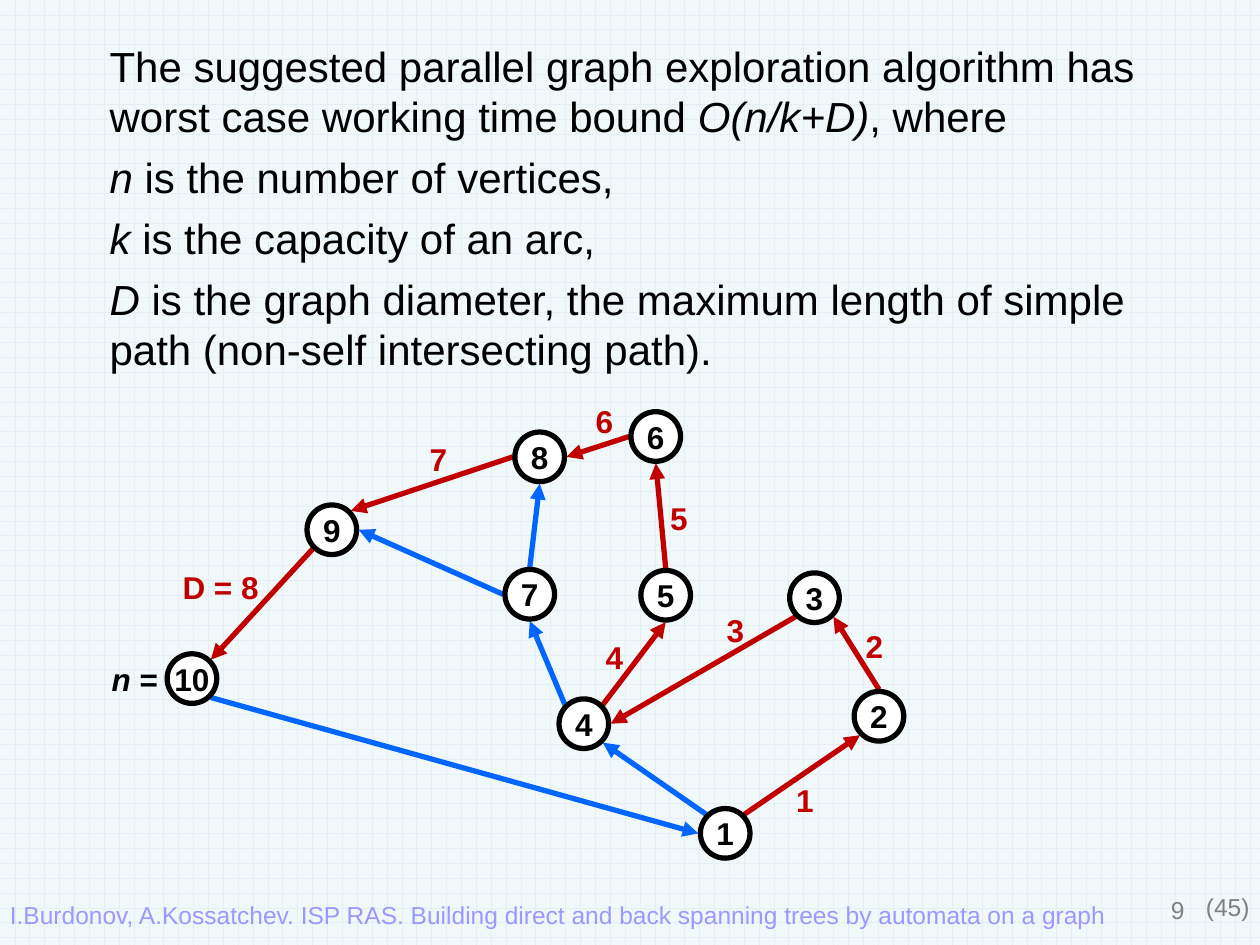
"""Build a slide on the working time bound of parallel graph exploration."""
import math

from lxml import etree
from pptx import Presentation
from pptx import util as u
from pptx.dml.color import RGBColor
from pptx.enum import dml, shapes, text
from pptx.oxml.ns import qn

COLORS = {
    "grid": "E7EDF5", "paper": "F1F8F9", "black": "000000", "white": "FFFFFF",
    "red": "C00000", "blue": "0066FF", "gray": "808080", "lilac": "9999FF",
}
NODES = {
    1: (14.62, 16.8), 2: (17.72, 14.44), 3: (16.42, 12.05), 4: (11.77, 14.59),
    5: (13.42, 12), 6: (13.22, 8.8), 7: (10.68, 11.98), 8: (10.88, 9.21),
    9: (6.69, 10.68), 10: (3.87, 13.68),
}
ANGLES = {"E": 0, "SE": 45, "S": 90, "SW": 135, "W": 180, "NW": 225, "N": 270, "NE": 315}
LONGEST_PATH = [
    (1, "NE", 2, "SW"), (2, "N", 3, "SE"), (3, "SW", 4, "E"), (4, "NE", 5, "S"),
    (5, "N", 6, "S"), (6, "W", 8, "E"), (8, "W", 9, "NE"), (9, "SW", 10, "NE"),
]
OTHER_ARCS = [
    (1, "NW", 4, "SE"), (4, "NW", 7, "S"), (7, "W", 9, "E"),
    (7, "N", 8, "S"), (10, "SE", 1, "W"),
]
STEP_LABELS = [
    ("1", 15.8, 15.62), ("2", 17.2, 12.52), ("3", 14.4, 12.19), ("4", 11.96, 12.73),
    ("5", 13.26, 9.93), ("6", 11.76, 7.98), ("7", 8.41, 8.74),
]
BODY = [
    [("The suggested parallel graph exploration algorithm has worst case "
      "working time bound ", False), ("O(n/k+D)", True), (", where", False)],
    [("n", True), (" is the number of vertices,", False)],
    [("k ", True), ("is the capacity of an arc,", False)],
    [("D", True), (" is the graph diameter, the maximum length of simple path "
                   "(non-self intersecting path).", False)],
]


class GraphSlide:
    """Holds the style and the current slide."""

    font = "Arial"
    diameter = 1
    reach = 0.54
    stroke = u.Pt(3)

    def __init__(self, prs):
        self.s = prs.slides.add_slide(prs.slide_layouts[6])

    def color(self, name):
        return RGBColor.from_string(COLORS[name])

    def background(self):
        fill = self.s.background.fill
        fill.patterned()
        fill.pattern = dml.MSO_PATTERN.HORIZONTAL_BRICK
        fill.fore_color.rgb = self.color("grid")
        fill.back_color.rgb = self.color("paper")

    def add_runs(self, p, runs, size, color, bold=False):
        p.font.name = self.font
        p.font.size = u.Pt(size)
        p.font.bold = bold
        p.font.color.rgb = self.color(color)
        for words, italic in runs:
            r = p.add_run()
            r.text = words
            if italic:
                r.font.italic = True

    def text(self, box, paragraphs, size, color, bold=False, inset=True,
             wrap=True, align=text.PP_ALIGN.LEFT, gap=0):
        tf = self.s.shapes.add_textbox(*map(u.Cm, box)).text_frame
        tf.word_wrap = wrap
        if not inset:
            tf.margin_left = tf.margin_top = tf.margin_right = tf.margin_bottom = 0
        for i, runs in enumerate(paragraphs):
            p = tf.add_paragraph() if i else tf.paragraphs[0]
            p.alignment = align
            p.space_before = u.Pt(gap)
            self.add_runs(p, runs, size, color, bold)

    def label(self, x, y, width, runs, color):
        self.text((x, y, width, 1.02), [runs], 18, color, bold=True)

    def node(self, number):
        x, y = NODES[number]
        d = self.diameter
        sp = self.s.shapes.add_shape(
            shapes.MSO_SHAPE.OVAL, *map(u.Cm, (x - d / 2, y - d / 2, d, d)))
        sp.shadow.inherit = False
        sp.fill.solid()
        sp.fill.fore_color.rgb = self.color("white")
        sp.line.color.rgb = self.color("black")
        sp.line.width = self.stroke
        tf = sp.text_frame
        tf.word_wrap = False
        tf.vertical_anchor = text.MSO_ANCHOR.MIDDLE
        tf.margin_left = tf.margin_right = tf.margin_bottom = 0
        tf.margin_top = u.Cm(0.2)
        p = tf.paragraphs[0]
        p.alignment = text.PP_ALIGN.CENTER
        p.line_spacing = u.Pt(16)
        self.add_runs(p, [(str(number), False)], 18, "black", bold=True)

    def port(self, number, side):
        x, y = NODES[number]
        angle = math.radians(ANGLES[side])
        return u.Cm(x + self.reach * math.cos(angle)), u.Cm(y + self.reach * math.sin(angle))

    def arc(self, start, start_side, end, end_side, color):
        sp = self.s.shapes.add_connector(
            shapes.MSO_CONNECTOR.STRAIGHT,
            *self.port(start, start_side), *self.port(end, end_side))
        sp.line.color.rgb = self.color(color)
        sp.line.width = self.stroke
        sp_pr = sp._element.spPr
        etree.SubElement(sp_pr.find(qn("a:ln")), qn("a:tailEnd"), type="triangle")
        etree.SubElement(sp_pr, qn("a:effectLst"))


def main():
    prs = Presentation()
    prs.slide_width, prs.slide_height = u.Cm(25.4), u.Cm(19.05)
    slide = GraphSlide(prs)
    slide.background()
    slide.text((18.21, 17.91, 5.92, 1.32), [[("9", False)]], 14, "gray",
               align=text.PP_ALIGN.RIGHT)
    slide.text((24.31, 17.98, 0.89, 0.58), [[("(45)", False)]], 14, "gray",
               inset=False, wrap=False)
    footer = ("I.Burdonov, A.Kossatchev. ISP RAS. Building direct and back "
              "spanning trees by automata on a graph")
    slide.text((0.2, 18.14, 23.42, 0.6), [[(footer, False)]], 14, "lilac", inset=False)
    slide.text((2.21, 0.81, 21.21, 8.46), BODY, 24, "black", inset=False, gap=6)
    for arcs, color in ((LONGEST_PATH, "red"), (OTHER_ARCS, "blue")):
        for arc in arcs:
            slide.arc(*arc, color)
    for number in NODES:
        slide.node(number)
    for step, x, y in STEP_LABELS:
        slide.label(x, y, 0.9, [(step, False)], "red")
    slide.label(3.43, 11.33, 2.8, [("D = 8", False)], "red")
    slide.label(2, 13.18, 1.7, [("n", True), (" =", False)], "black")
    prs.save("out.pptx")


if __name__ == "__main__":
    main()
